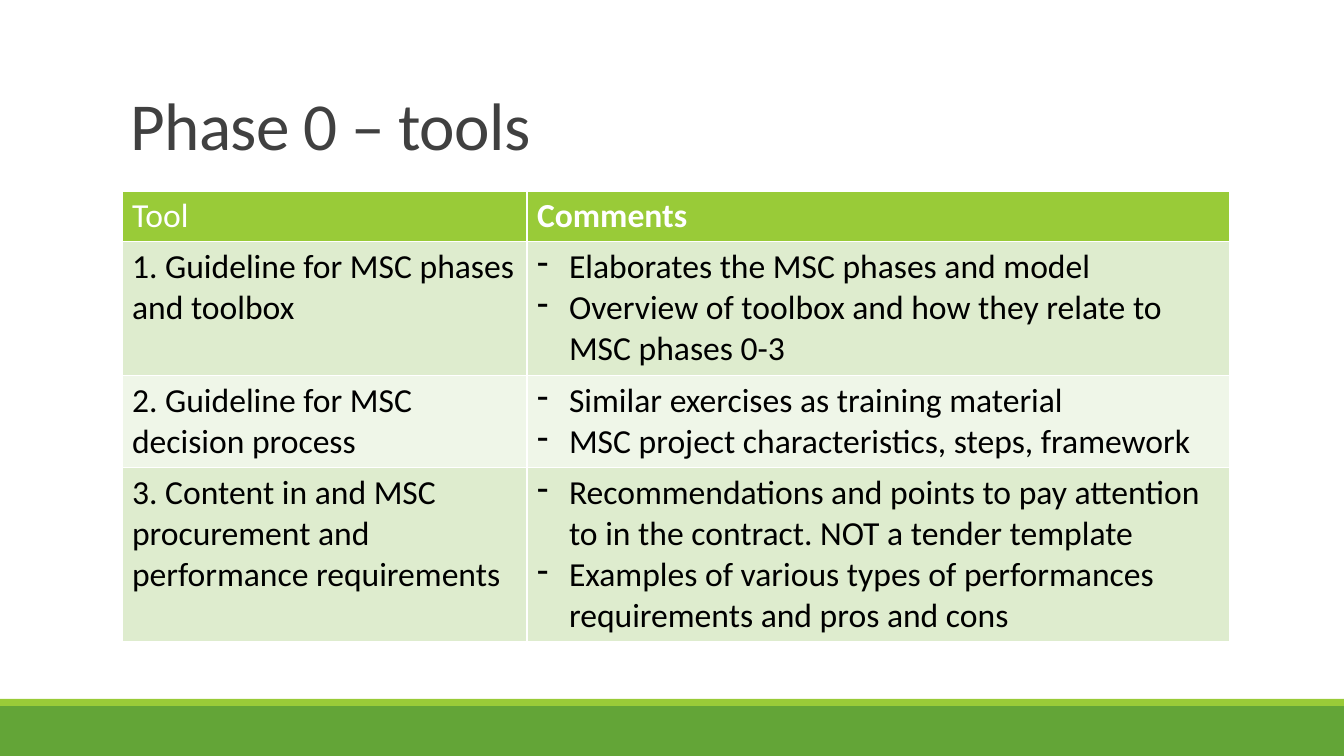
import pptx
import pptx.util
import pptx.dml.color
import pptx.enum.shapes
import pptx.enum.text
import lxml.etree

RGBColor = pptx.dml.color.RGBColor
WHITE = RGBColor(0xFF, 0xFF, 0xFF)
BLACK = RGBColor(0x00, 0x00, 0x00)
TITLE_GREY = RGBColor(0x40, 0x40, 0x40)
DARK_GREEN = RGBColor(0x63, 0xA5, 0x37)
LIME = RGBColor(0x99, 0xCB, 0x38)
BAND_GREENS = [RGBColor(0xDE, 0xEC, 0xCE), RGBColor(0xEF, 0xF6, 0xE8)]


def px(length):
    return pptx.util.Emu(round(length * 914400 / 100.8))


def style_text(paragraph, size, color, bold=False):
    for run in paragraph.runs:
        run.font.name = "Calibri"
        run.font.size = pptx.util.Pt(size)
        run.font.color.rgb = color
        run.font.bold = bold


deck = pptx.Presentation()
deck.slide_width = px(1344)
deck.slide_height = px(756)
slide = deck.slides.add_slide(deck.slide_layouts[6])

for top, height, color in [(706, 50, DARK_GREEN), (699, 7, LIME)]:
    footer_band = slide.shapes.add_shape(
        pptx.enum.shapes.MSO_SHAPE.RECTANGLE, 0, px(top), px(1344), px(height))
    footer_band.shadow.inherit = False
    footer_band.fill.solid()
    footer_band.fill.fore_color.rgb = color
    footer_band.line.fill.background()

title = slide.shapes.add_textbox(px(121), px(9), px(1109), px(160))
title.text_frame.word_wrap = True
title.text_frame.vertical_anchor = pptx.enum.text.MSO_ANCHOR.BOTTOM
title.text_frame.text = "Phase 0 – tools"
heading = title.text_frame.paragraphs[0]
heading.line_spacing = 0.85
style_text(heading, 48, TITLE_GREY)
heading.runs[0].font._element.set("spc", "-50")

tools = [
    ("Tool", ["Comments"]),
    ("1. Guideline for MSC phases and toolbox", [
        "Elaborates the MSC phases and model",
        "Overview of toolbox and how they relate to MSC phases 0-3"]),
    ("2. Guideline for MSC decision process", [
        "Similar exercises as training material",
        "MSC project characteristics, steps, framework"]),
    ("3. Content in and MSC procurement and performance requirements", [
        "Recommendations and points to pay attention to in the contract. NOT a tender template",
        "Examples of various types of performances requirements and pros and cons"]),
]
row_heights = [50, 134, 92, 174]
column_widths = [405, 703]

tool_table = slide.shapes.add_table(
    len(tools), 2, px(122), px(191), px(sum(column_widths)), px(sum(row_heights))).table
for column, width in zip(tool_table.columns, column_widths):
    column.width = px(width)

for row_index, (tool, comments) in enumerate(tools):
    is_header = row_index == 0
    tool_table.rows[row_index].height = px(row_heights[row_index])
    for column_index, lines in enumerate([[tool], comments]):
        cell = tool_table.cell(row_index, column_index)
        cell.fill.solid()
        cell.fill.fore_color.rgb = LIME if is_header else BAND_GREENS[(row_index - 1) % 2]
        cell.text_frame.text = "\n".join(lines)
        for paragraph in cell.text_frame.paragraphs:
            if column_index == 1 and not is_header:
                properties = paragraph._p.get_or_add_pPr()
                properties.set("marL", str(px(32)))
                properties.set("indent", str(-px(32)))
                bullet = lxml.etree.SubElement(properties, pptx.oxml.ns.qn("a:buChar"))
                bullet.set("char", "-")
            style_text(paragraph, 24, WHITE if is_header else BLACK,
                       is_header and column_index == 1)

deck.save("out.pptx")
